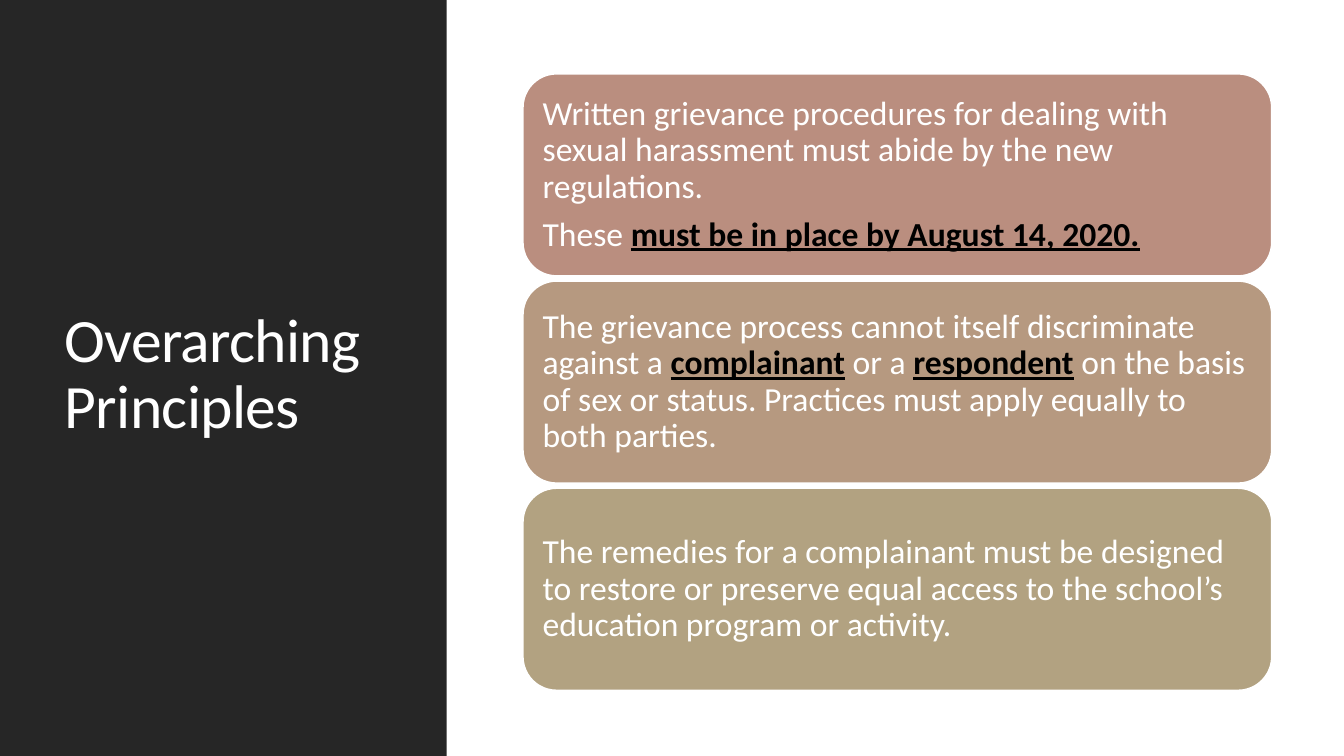
import pptx
import pptx.dml.color
import pptx.enum.shapes
import pptx.enum.text
import pptx.util

Pt = pptx.util.Pt
SHAPES = pptx.enum.shapes.MSO_SHAPE
DARK, WHITE, BLACK = "262626", "FFFFFF", "000000"


def color(hex_string):
    return pptx.dml.color.RGBColor.from_string(hex_string)


class SlideBuilder:
    font_name = "Calibri"
    line_spacing = 0.9

    def __init__(self, slide):
        self.slide = slide

    def add_run(self, paragraph, text, size, strong=False):
        run = paragraph.add_run()
        run.text = text
        run.font.name = self.font_name
        run.font.size = Pt(size)
        run.font.color.rgb = color(BLACK if strong else WHITE)
        run.font.bold = strong
        run.font.underline = strong
        return run

    def format_frame(self, frame, inset):
        frame.word_wrap = True
        frame.auto_size = pptx.enum.text.MSO_AUTO_SIZE.NONE
        frame.vertical_anchor = pptx.enum.text.MSO_ANCHOR.MIDDLE
        frame.margin_left = frame.margin_right = Pt(7.2)
        frame.margin_top = frame.margin_bottom = Pt(inset)

    def format_paragraph(self, paragraph, space_after=0):
        paragraph.alignment = pptx.enum.text.PP_ALIGN.LEFT
        paragraph.line_spacing = self.line_spacing
        paragraph.space_before = Pt(0)
        paragraph.space_after = Pt(space_after)

    def add_box(self, kind, left, top, width, height, fill, line=None):
        shape = self.slide.shapes.add_shape(
            kind, Pt(left), Pt(top), Pt(width), Pt(height))
        shape.shadow.inherit = False
        shape.fill.solid()
        shape.fill.fore_color.rgb = color(fill)
        if line:
            shape.line.color.rgb = color(line)
            shape.line.width = Pt(1.25)
        else:
            shape.line.fill.background()
        return shape

    def add_card(self, left, top, width, height, fill, paragraphs):
        """Add a rounded card; each paragraph is a list of (text, strong) runs."""
        card = self.add_box(SHAPES.ROUNDED_RECTANGLE, left, top, width, height,
                            fill, WHITE)
        frame = card.text_frame
        self.format_frame(frame, 7.2)
        for index, runs in enumerate(paragraphs):
            paragraph = frame.add_paragraph() if index else frame.paragraphs[0]
            self.format_paragraph(paragraph, 8.4)
            for text, strong in runs:
                self.add_run(paragraph, text, 24, strong)

    def set_title(self, text, left, top, width, height):
        """Fill the title placeholder and bring it in front of the panel."""
        title = self.slide.shapes.title
        title.left, title.top = Pt(left), Pt(top)
        title.width, title.height = Pt(width), Pt(height)
        self.format_frame(title.text_frame, 3.6)
        paragraph = title.text_frame.paragraphs[0]
        self.format_paragraph(paragraph)
        run = self.add_run(paragraph, text, 44)
        run.font._element.set("spc", "-50")
        title.element.getparent().append(title.element)


CARDS = [
    ("BA8E7F", [
        [("Written grievance procedures for dealing with sexual harassment "
          "must abide by the new regulations.", False)],
        [("These ", False), ("must be in place by August 14, 2020.", True)],
    ]),
    ("B69980", [
        [("The grievance process cannot itself discriminate against a ", False),
         ("complainant", True), (" or a ", False), ("respondent", True),
         (" on the basis of sex or status. Practices must apply equally to "
          "both parties.", False)],
    ]),
    ("B2A281", [
        [("The remedies for a complainant must be designed to restore or "
          "preserve equal access to the school’s education program or "
          "activity.", False)],
    ]),
]


def main():
    presentation = pptx.Presentation()
    presentation.slide_width, presentation.slide_height = Pt(960), Pt(540)
    slide = presentation.slides.add_slide(presentation.slide_layouts[5])
    slide.background.fill.solid()
    slide.background.fill.fore_color.rgb = color(WHITE)

    builder = SlideBuilder(slide)
    builder.add_box(SHAPES.RECTANGLE, 0, 0, 319, 540, DARK)
    builder.set_title("Overarching Principles", 39, 41, 252, 454.5)
    card_top, card_step = 52.7, 148
    for index, (fill, paragraphs) in enumerate(CARDS):
        builder.add_card(373.5, card_top + index * card_step, 535, 144.5,
                         fill, paragraphs)
    presentation.save("out.pptx")


if __name__ == "__main__":
    main()
